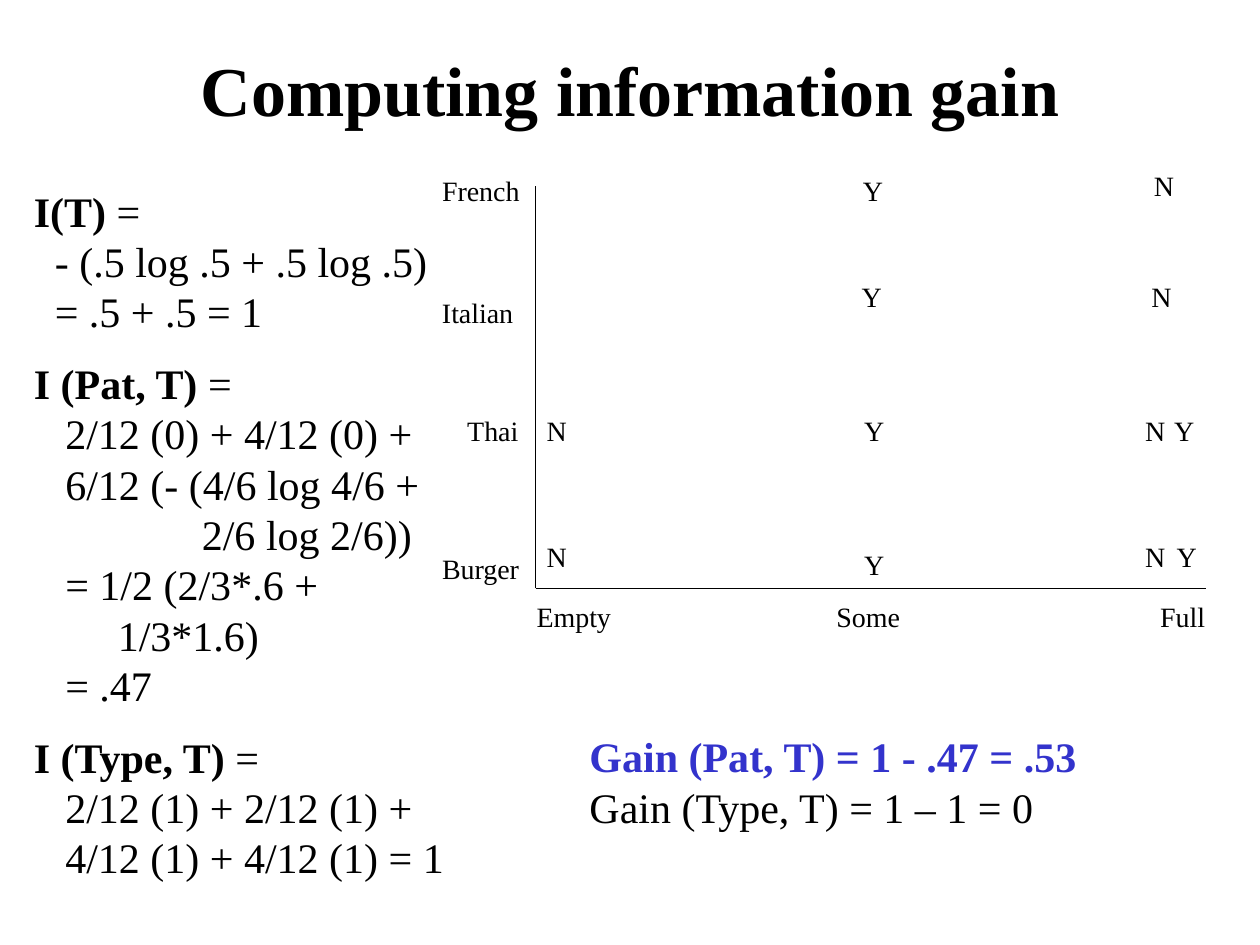
"""Build the slide on computing information gain."""
from lxml.etree import SubElement
from pptx import Presentation
from pptx.dml.color import RGBColor
from pptx.enum.shapes import MSO_CONNECTOR
from pptx.enum.text import MSO_ANCHOR, MSO_AUTO_SIZE, PP_ALIGN
from pptx.oxml.ns import qn
from pptx.util import Pt

PX = 9144
BLACK = "000000"
BLUE = "3333CC"


def style(font, size, color=BLACK, bold=False):
    font.name = "Times New Roman"
    font.size = Pt(size)
    font.bold = bold
    font.color.rgb = RGBColor.from_string(color)


def add_text_frame(shapes, left, top, width, height, wrap):
    box = shapes.add_textbox(left * PX, top * PX, width * PX, height * PX)
    frame = box.text_frame
    frame.word_wrap = wrap
    frame.auto_size = MSO_AUTO_SIZE.SHAPE_TO_FIT_TEXT
    return frame


presentation = Presentation()
presentation.slide_width = 1000 * PX
presentation.slide_height = 750 * PX
slide = presentation.slides.add_slide(presentation.slide_layouts[5])

title = slide.shapes.title
title.left, title.top, title.width, title.height = 75 * PX, 8 * PX, 850 * PX, 125 * PX
title.text_frame.text = "Computing information gain"
title.text_frame.vertical_anchor = MSO_ANCHOR.MIDDLE
title.text_frame.auto_size = MSO_AUTO_SIZE.NONE
paragraph = title.text_frame.paragraphs[0]
paragraph.alignment = PP_ALIGN.CENTER
style(paragraph.font, 40, bold=True)

plot = slide.shapes.add_group_shape()
origin_x, origin_y = 425, 467
for end_x, end_y in [(425, 148), (957, 467)]:
    axis = plot.shapes.add_connector(
        MSO_CONNECTOR.STRAIGHT, origin_x * PX, origin_y * PX, end_x * PX, end_y * PX
    )
    axis.line.color.rgb = RGBColor.from_string(BLACK)
    axis.line.width = Pt(0.75)
    SubElement(axis.element.spPr, qn("a:effectLst"))

type_labels = [
    ("French", 341, 133, 82),
    ("Italian", 341, 230, 77),
    ("Thai", 361, 323, 61),
    ("Burger", 341, 433, 82),
]
patron_labels = [("Empty", 416, 471, 79), ("Some", 654, 471, 71), ("Full", 911, 471, 56)]
outcomes = {
    "Y": [(675, 133), (674, 217), (676, 323), (676, 430), (922, 323), (924, 423)],
    "N": [(899, 423), (899, 323), (904, 217), (906, 129), (424, 323), (424, 423)],
}
markers = [(letter, left, top, 36) for letter, spots in outcomes.items() for left, top in spots]
for text, left, top, width in type_labels + patron_labels + markers:
    frame = add_text_frame(plot.shapes, left, top, width, 37, False)
    frame.text = text
    style(frame.paragraphs[0].font, 16)

space_width = Pt(6)
formulas = [
    ("I(T)", [(2, "- (.5 log .5 + .5 log .5)"), (2, "= .5 + .5 = 1")]),
    (
        "I (Pat, T)",
        [
            (3, "2/12 (0) + 4/12 (0) +"),
            (3, "6/12 (- (4/6 log 4/6 +"),
            (16, "2/6 log 2/6))"),
            (3, "= 1/2 (2/3*.6 +"),
            (8, "1/3*1.6)"),
            (3, "= .47"),
        ],
    ),
    ("I (Type, T)", [(3, "2/12 (1) + 2/12 (1) +"), (3, "4/12 (1) + 4/12 (1) = 1")]),
]
frame = add_text_frame(slide.shapes, 17, 142, 358, 576, True)
for index, (name, steps) in enumerate(formulas):
    paragraph = frame.add_paragraph() if index else frame.paragraphs[0]
    paragraph.space_before = Pt(12 if index else 0)
    for text, bold in [(name + " ", True), ("=", False)]:
        run = paragraph.add_run()
        run.text = text
        style(run.font, 24, bold=bold)
    for indent, text in steps:
        paragraph = frame.add_paragraph()
        paragraph.text = text
        paragraph._p.get_or_add_pPr().set("marL", str(indent * space_width))
        style(paragraph.font, 24)

gains = [("Gain (Pat, T) = 1 - .47 = .53", BLUE, True), ("Gain (Type, T) = 1 – 1 = 0", BLACK, False)]
frame = add_text_frame(slide.shapes, 458, 575, 425, 90, True)
frame.text = "\n".join(text for text, color, bold in gains)
for paragraph, (text, color, bold) in zip(frame.paragraphs, gains):
    style(paragraph.font, 24, color, bold)

presentation.save("out.pptx")
